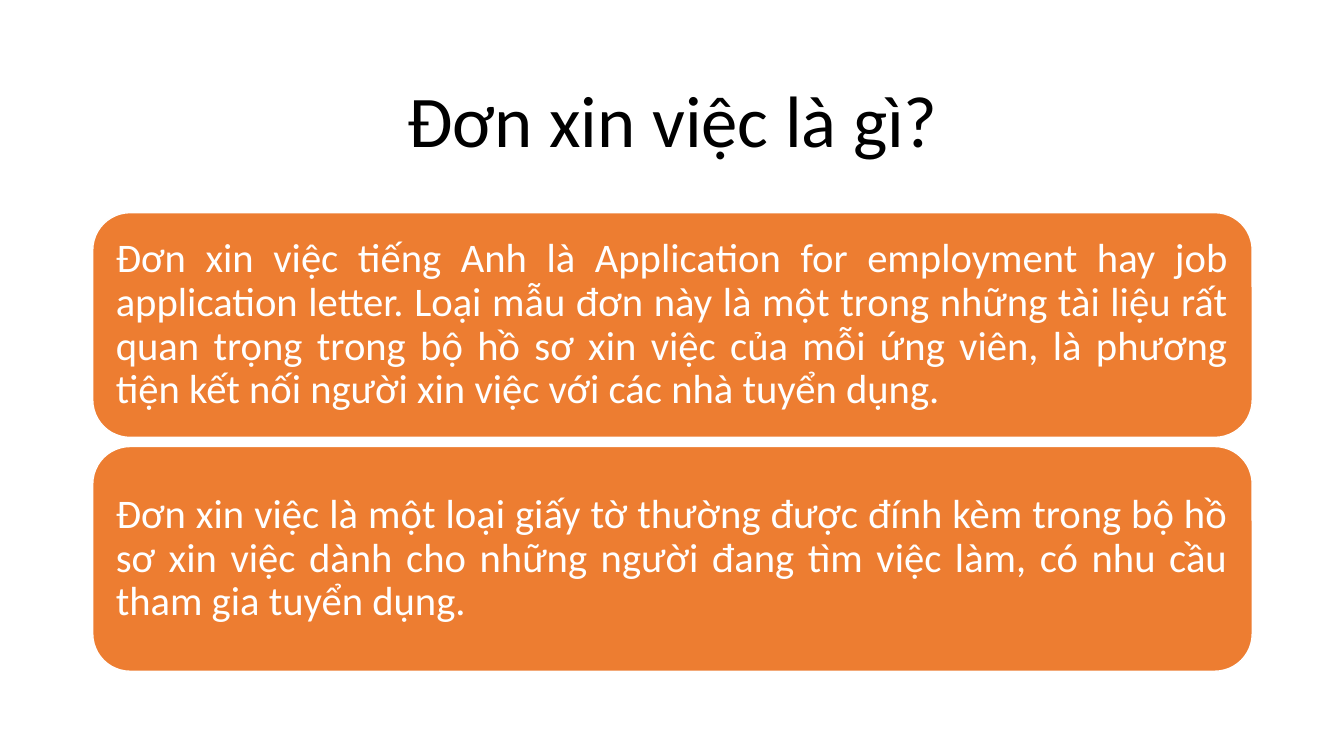
from pptx import Presentation
from pptx.dml.color import RGBColor
from pptx.enum.shapes import MSO_SHAPE as SHAPE
from pptx.enum.text import MSO_ANCHOR as ANCHOR, PP_ALIGN as ALIGN
from pptx.util import Inches, Pt

FONT = "Calibri"
LEFT, WIDTH = 0.92, 11.5
CARD_TOP, CARD_HEIGHT, CARD_PITCH = 2.11, 2.23, 2.32
CARDS = [
    "Đơn xin việc tiếng Anh là Application for employment hay job application letter. "
    "Loại mẫu đơn này là một trong những tài liệu rất quan trọng trong bộ hồ sơ xin việc "
    "của mỗi ứng viên, là phương tiện kết nối người xin việc với các nhà tuyển dụng.",
    "Đơn xin việc là một loại giấy tờ thường được đính kèm trong bộ hồ sơ xin việc "
    "dành cho những người đang tìm việc làm, có nhu cầu tham gia tuyển dụng.",
]


def rgb(value):
    """Return the colour for a hex string."""
    return RGBColor.from_string(value)


def set_text(sp, text, size, color, align):
    """Fill a shape with one formatted, vertically centred paragraph."""
    tf = sp.text_frame
    tf.text = text
    tf.word_wrap = True
    tf.vertical_anchor = ANCHOR.MIDDLE
    p = tf.paragraphs[0]
    p.alignment = align
    p.line_spacing = 0.9
    font = p.runs[0].font
    font.name, font.size = FONT, Pt(size)
    font.color.rgb = rgb(color)


def add_title(s, text):
    """Place and format the title placeholder."""
    sp = s.shapes.title
    sp.left, sp.top = Inches(LEFT), Inches(0.61)
    sp.width, sp.height = Inches(WIDTH), Inches(1.24)
    set_text(sp, text, 52, "000000", ALIGN.CENTER)


def add_card(s, top, text):
    """Add a rounded orange card with justified text."""
    sp = s.shapes.add_shape(SHAPE.ROUNDED_RECTANGLE, Inches(LEFT), Inches(top),
                            Inches(WIDTH), Inches(CARD_HEIGHT))
    sp.shadow.inherit = False
    sp.fill.solid()
    sp.fill.fore_color.rgb = rgb("ED7D31")
    sp.line.color.rgb = rgb("FFFFFF")
    sp.line.width = Pt(1)
    tf = sp.text_frame
    tf.margin_left = tf.margin_right = Inches(0.12)
    tf.margin_top = tf.margin_bottom = Inches(0.12)
    set_text(sp, text, 29, "FFFFFF", ALIGN.JUSTIFY)


def main():
    """Build and save the slide."""
    prs = Presentation()
    prs.slide_width, prs.slide_height = Inches(13.33), Inches(7.5)
    s = prs.slides.add_slide(prs.slide_layouts[5])
    add_title(s, "Đơn xin việc là gì?")
    for i, text in enumerate(CARDS):
        add_card(s, CARD_TOP + i * CARD_PITCH, text)
    prs.save("out.pptx")


if __name__ == "__main__":
    main()
